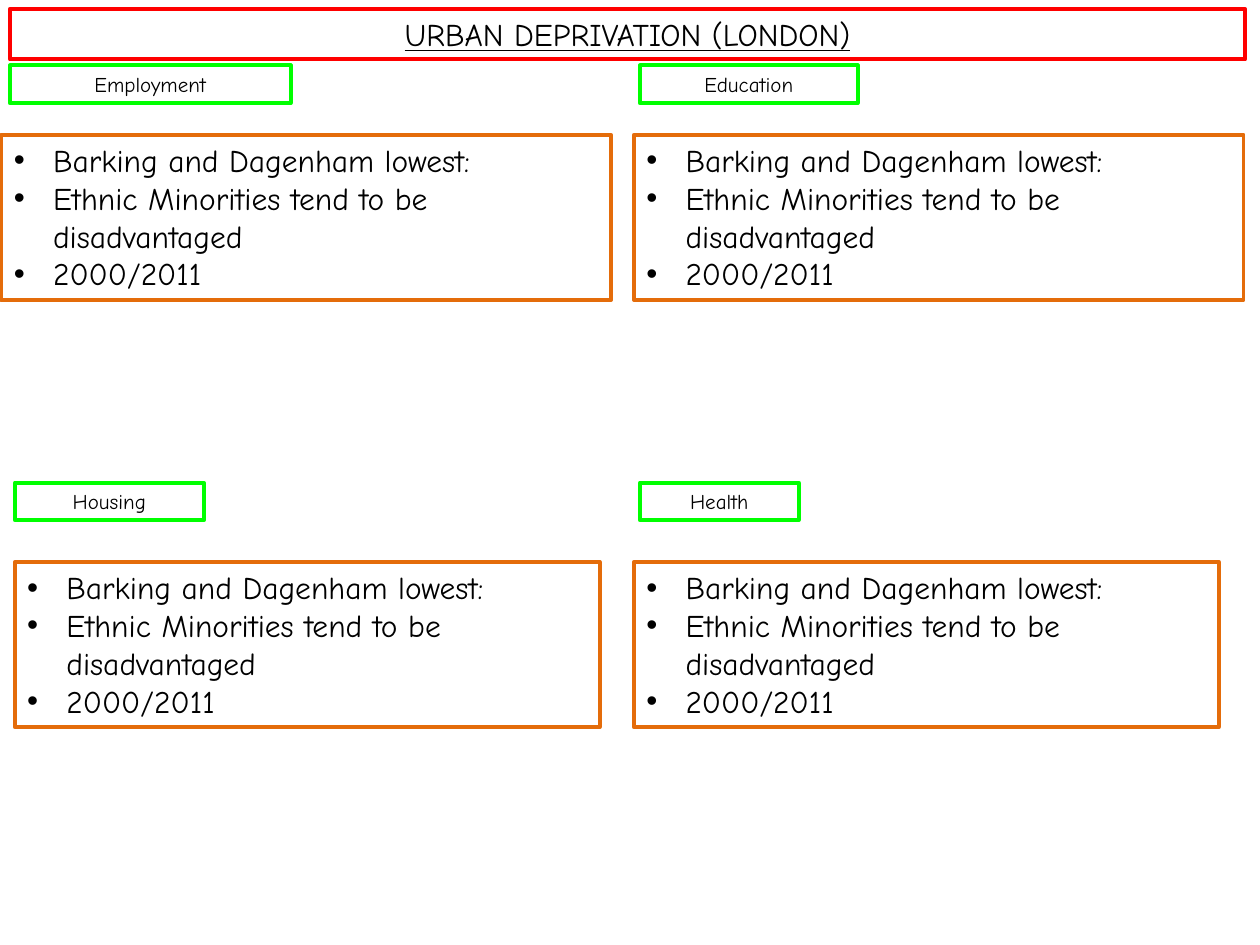
import pptx
import pptx.dml.color
import pptx.enum.shapes
import pptx.enum.text
import pptx.oxml
import pptx.oxml.ns
import pptx.util
from pptx.util import Cm

FONT = "Comic Neue"
FINDINGS = [
    "Barking and Dagenham lowest:",
    "Ethnic Minorities tend to be disadvantaged",
    "2000/2011",
]


def color(value):
    """Return the colour for a hex string."""
    return pptx.dml.color.RGBColor.from_string(value)


def add_bullet(paragraph):
    """Give a paragraph a hanging round bullet."""
    properties = paragraph._p.get_or_add_pPr()
    properties.set("marL", str(Cm(0.79)))
    properties.set("indent", str(-Cm(0.79)))
    namespace = pptx.oxml.ns.nsdecls("a")
    for tag in ('buFont typeface="Arial"', 'buChar char="•"'):
        properties.append(pptx.oxml.parse_xml(f"<a:{tag} {namespace}/>"))


def write(paragraph, text, size=18, underline=None, centered=False, bullet=False):
    """Write formatted text into a paragraph."""
    align = pptx.enum.text.PP_ALIGN
    paragraph.alignment = align.CENTER if centered else align.LEFT
    if bullet:
        add_bullet(paragraph)
    run = paragraph.add_run()
    run.text = text
    run.font.name = FONT
    run.font.size = pptx.util.Pt(size)
    run.font.underline = underline
    run.font.color.rgb = color("000000")


def add_frame(slide, left, top, width, height, outline, lines, **text_format):
    """Add an outlined box holding one paragraph per line."""
    frame = slide.shapes.add_shape(
        pptx.enum.shapes.MSO_SHAPE.RECTANGLE, Cm(left), Cm(top), Cm(width), Cm(height)
    )
    frame.shadow.inherit = False
    frame.fill.background()
    frame.line.color.rgb = color(outline)
    frame.line.width = pptx.util.Pt(2.25)
    content = frame.text_frame
    content.word_wrap = True
    content.auto_size = pptx.enum.text.MSO_AUTO_SIZE.SHAPE_TO_FIT_TEXT
    content.vertical_anchor = pptx.enum.text.MSO_ANCHOR.TOP
    for index, line in enumerate(lines):
        paragraph = content.add_paragraph() if index else content.paragraphs[0]
        write(paragraph, line, **text_format)


def add_title(slide, left, top, width, height):
    """Add the underlined slide title."""
    add_frame(slide, left, top, width, height, "FF0000",
              ["URBAN DEPRIVATION (LONDON)"], underline=True, centered=True)


def add_section(slide, box, heading, heading_indent, heading_width):
    """Add a heading with its findings at the bottom of the box."""
    left, top, width, height = box
    findings_height = 3.33
    add_frame(slide, left + heading_indent, top, heading_width, 0.76, "00FF00",
              [heading], size=12, centered=True)
    add_frame(slide, left, top + height - findings_height, width, findings_height,
              "E46C0A", FINDINGS, bullet=True)


def main():
    """Build and save the slide."""
    presentation = pptx.Presentation()
    presentation.slide_width = Cm(25.4)
    presentation.slide_height = Cm(19.05)
    slide = presentation.slides.add_slide(presentation.slide_layouts[6])
    add_title(slide, 0.2, 0.18, 24.9, 1.02)
    right = 12.78
    upper = {"top": 1.32, "width": 12.29, "height": 4.73}
    lower = {"top": 9.73, "width": 11.79, "height": 4.93}
    sections = [
        ("Employment", 0.03, upper, 0.17, 5.66),
        ("Education", right, upper, 0.12, 4.39),
        ("Housing", 0.3, lower, 0, 3.81),
        ("Health", right, lower, 0.12, 3.2),
    ]
    for heading, left, row, indent, heading_width in sections:
        add_section(slide, (left, *row.values()), heading, indent, heading_width)
    presentation.save("out.pptx")


if __name__ == "__main__":
    main()
